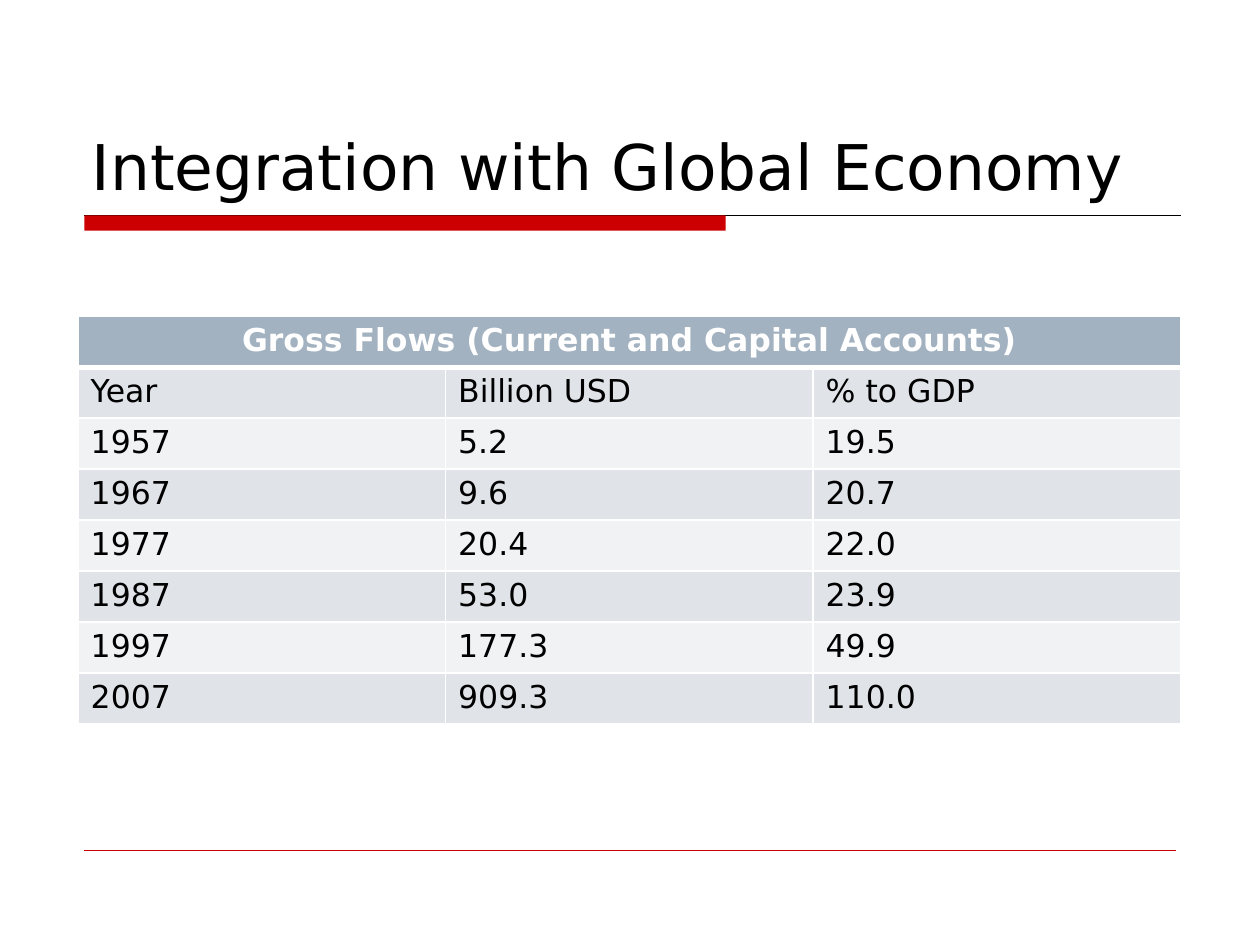
from dataclasses import dataclass

from lxml.etree import SubElement
from pptx import Presentation
from pptx.dml.color import RGBColor
from pptx.enum.shapes import MSO_CONNECTOR, MSO_SHAPE
from pptx.enum.text import MSO_ANCHOR, PP_ALIGN
from pptx.oxml.ns import qn
from pptx.util import Inches, Pt

BLACK = RGBColor(0x00, 0x00, 0x00)
WHITE = RGBColor(0xFF, 0xFF, 0xFF)
RED = RGBColor(0xCC, 0x00, 0x00)
HEADING_FILL = RGBColor(0xA3, 0xB2, 0xC1)
BAND_FILLS = (RGBColor(0xE0, 0xE4, 0xE9), RGBColor(0xF0, 0xF2, 0xF4))
FONT = "DejaVu Sans"
MARGIN = 0.67

HEADING = "Gross Flows (Current and Capital Accounts)"
FLOWS = (
    ("Year", "Billion USD", "% to GDP"),
    ("1957", "5.2", "19.5"),
    ("1967", "9.6", "20.7"),
    ("1977", "20.4", "22.0"),
    ("1987", "53.0", "23.9"),
    ("1997", "177.3", "49.9"),
    ("2007", "909.3", "110.0"),
)


@dataclass(frozen=True)
class Rule:
    y: float
    end: float
    color: RGBColor
    weight: float


RULES = (Rule(1.71, 9.37, BLACK, 0.5), Rule(6.75, 9.33, RED, 0.25))


def write(frame, text: str, *, size: float = 18, color: RGBColor = BLACK,
          bold: bool = False, align: PP_ALIGN = PP_ALIGN.LEFT) -> None:
    paragraph = frame.paragraphs[0]
    paragraph.alignment = align
    run = paragraph.add_run()
    run.text = text
    run.font.name = FONT
    run.font.size = Pt(size)
    run.font.bold = bold
    run.font.color.rgb = color


def draw_rule(slide, rule: Rule) -> None:
    line = slide.shapes.add_connector(
        MSO_CONNECTOR.STRAIGHT, Inches(MARGIN), Inches(rule.y),
        Inches(rule.end), Inches(rule.y))
    line.line.color.rgb = rule.color
    line.line.width = Pt(rule.weight)
    SubElement(line._element.spPr, qn("a:effectLst"))


def draw_accent(slide) -> None:
    accent = slide.shapes.add_shape(
        MSO_SHAPE.RECTANGLE, Inches(MARGIN), Inches(1.71),
        Inches(5.09), Inches(0.12))
    accent.shadow.inherit = False
    accent.fill.solid()
    accent.fill.fore_color.rgb = RED
    accent.line.fill.background()


def draw_title(slide, text: str) -> None:
    title = slide.shapes.add_textbox(
        Inches(0.63), Inches(0.33), Inches(9.04), Inches(1.33))
    title.text_frame.word_wrap = True
    title.text_frame.vertical_anchor = MSO_ANCHOR.BOTTOM
    write(title.text_frame, text, size=36)


def style_cell(cell, fill: RGBColor, top: float = 1, bottom: float = 1) -> None:
    properties = cell._tc.get_or_add_tcPr()
    for side, weight in (("L", 1), ("R", 1), ("T", top), ("B", bottom)):
        border = SubElement(properties, qn(f"a:ln{side}"), w=str(Pt(weight)))
        paint = SubElement(border, qn("a:solidFill"))
        SubElement(paint, qn("a:srgbClr"), val=str(WHITE))
    cell.fill.solid()
    cell.fill.fore_color.rgb = fill


def draw_flows(slide) -> None:
    row_count, column_count = len(FLOWS) + 1, len(FLOWS[0])
    table = slide.shapes.add_table(
        row_count, column_count, Inches(0.62), Inches(2.51),
        Inches(8.75), Inches(3.24)).table
    heading = table.cell(0, 0)
    heading.merge(table.cell(0, column_count - 1))
    for cell in table.rows[0].cells:
        style_cell(cell, HEADING_FILL, bottom=3)
    write(heading.text_frame, HEADING, color=WHITE, bold=True,
          align=PP_ALIGN.CENTER)
    for row, values in enumerate(FLOWS):
        for column, value in enumerate(values):
            cell = table.cell(row + 1, column)
            style_cell(cell, BAND_FILLS[row % 2], top=1 if row else 3)
            write(cell.text_frame, value)


def main() -> None:
    deck = Presentation()
    deck.slide_width, deck.slide_height = Inches(10), Inches(7.5)
    slide = deck.slides.add_slide(deck.slide_layouts[6])
    for rule in RULES:
        draw_rule(slide, rule)
    draw_accent(slide)
    draw_title(slide, "Integration with Global Economy")
    draw_flows(slide)
    deck.save("out.pptx")


if __name__ == "__main__":
    main()
